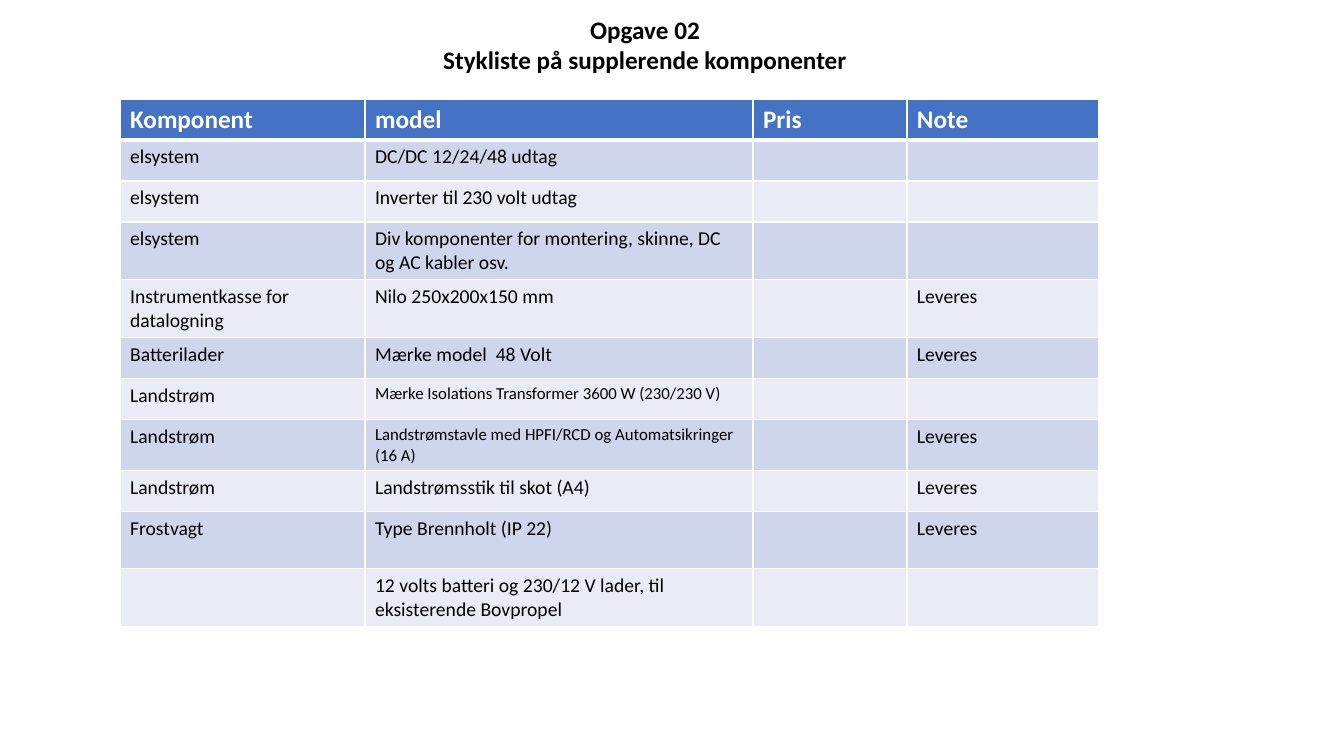
import dataclasses

import lxml.etree
import pptx
import pptx.dml.color
import pptx.enum.text
import pptx.oxml.ns
import pptx.util

EMU_PER_PX = 914400 / 100.8
FONT = "Calibri"
COLORS = {
    "header": "4472C4",
    "band_dark": "CFD5EA",
    "band_light": "E9EBF5",
    "white": "FFFFFF",
    "black": "000000",
}
TITLE_LINES = ("Opgave 02", "Stykliste på supplerende komponenter")
HEADINGS = ("Komponent", "model", "Pris", "Note")
COLUMN_WIDTHS = (245, 388, 154, 192)
ROW_HEIGHT = 41
THIN_BORDER, THICK_BORDER = 1, 3
TITLE_FORMAT = {"name": FONT, "size": pptx.util.Pt(18), "bold": True}


@dataclasses.dataclass(frozen=True)
class Component:
    name: str
    model: str
    note: str = ""
    height: int = ROW_HEIGHT
    model_size: int = 14


COMPONENTS = (
    Component("elsystem", "DC/DC 12/24/48 udtag"),
    Component("elsystem", "Inverter til 230 volt udtag"),
    Component("elsystem", "Div komponenter for montering, skinne, DC og AC kabler osv.", height=57),
    Component("Instrumentkasse for datalogning", "Nilo 250x200x150 mm", "Leveres", 57),
    Component("Batterilader", "Mærke model  48 Volt", "Leveres"),
    Component("Landstrøm", "Mærke Isolations Transformer 3600 W (230/230 V)", model_size=12),
    Component("Landstrøm", "Landstrømstavle med HPFI/RCD og Automatsikringer (16 A)", "Leveres", 50, 12),
    Component("Landstrøm", "Landstrømsstik til skot (A4)", "Leveres"),
    Component("Frostvagt", "Type Brennholt (IP 22)", "Leveres", 57),
    Component("", "12 volts batteri og 230/12 V lader, til eksisterende Bovpropel", height=57),
)


def px(length: int) -> pptx.util.Emu:
    return pptx.util.Emu(round(length * EMU_PER_PX))


def rgb(name: str) -> pptx.dml.color.RGBColor:
    return pptx.dml.color.RGBColor.from_string(COLORS[name])


def apply_format(target, values: dict) -> None:
    for attribute, value in values.items():
        setattr(target, attribute, value)


def set_borders(cell, top: int, bottom: int) -> None:
    """Draw white cell borders, with top and bottom widths in points."""
    properties = cell._tc.get_or_add_tcPr()
    widths = {"lnL": THIN_BORDER, "lnR": THIN_BORDER, "lnT": top, "lnB": bottom}
    for tag, width in widths.items():
        line = lxml.etree.SubElement(
            properties, pptx.oxml.ns.qn(f"a:{tag}"), w=str(pptx.util.Pt(width))
        )
        fill = lxml.etree.SubElement(line, pptx.oxml.ns.qn("a:solidFill"))
        lxml.etree.SubElement(fill, pptx.oxml.ns.qn("a:srgbClr"), val=COLORS["white"])


def fill_cell(cell, text: str, row: int, size: int) -> None:
    is_header = row == 0
    set_borders(
        cell,
        top=THICK_BORDER if row == 1 else THIN_BORDER,
        bottom=THICK_BORDER if is_header else THIN_BORDER,
    )
    cell.fill.solid()
    band = "band_dark" if row % 2 else "band_light"
    cell.fill.fore_color.rgb = rgb("header" if is_header else band)
    cell.text = text
    font = cell.text_frame.paragraphs[0].font
    for run in cell.text_frame.paragraphs[0].runs:
        font = run.font
    apply_format(font, {"name": FONT, "size": pptx.util.Pt(size), "bold": is_header})
    font.color.rgb = rgb("white" if is_header else "black")


def add_title(slide) -> None:
    title = slide.shapes.title
    apply_format(title, {"left": px(432), "top": px(9), "width": px(426), "height": px(72)})
    frame = title.text_frame
    frame.text = "\n".join(TITLE_LINES)
    apply_format(frame, {
        "word_wrap": False,
        "auto_size": pptx.enum.text.MSO_AUTO_SIZE.NONE,
        "vertical_anchor": pptx.enum.text.MSO_ANCHOR.TOP,
    })
    for paragraph in frame.paragraphs:
        paragraph.alignment = pptx.enum.text.PP_ALIGN.CENTER
        font = paragraph.runs[0].font
        apply_format(font, TITLE_FORMAT)
        font.color.rgb = rgb("black")


def add_parts_table(slide) -> None:
    heights = [ROW_HEIGHT] + [component.height for component in COMPONENTS]
    table = slide.shapes.add_table(
        len(heights), len(HEADINGS), px(120), px(99), px(sum(COLUMN_WIDTHS)), px(sum(heights))
    ).table
    apply_format(table, {"first_row": False, "horz_banding": False})
    for column, width in zip(table.columns, COLUMN_WIDTHS):
        column.width = px(width)
    for row, height in zip(table.rows, heights):
        row.height = px(height)
    for column, heading in enumerate(HEADINGS):
        fill_cell(table.cell(0, column), heading, 0, 18)
    for row, component in enumerate(COMPONENTS, start=1):
        texts = (component.name, component.model, "", component.note)
        sizes = (14, component.model_size, 14, 14)
        for column, (text, size) in enumerate(zip(texts, sizes)):
            fill_cell(table.cell(row, column), text, row, size)


def main() -> None:
    presentation = pptx.Presentation()
    apply_format(presentation, {"slide_width": px(1344), "slide_height": px(756)})
    slide = presentation.slides.add_slide(presentation.slide_layouts.get_by_name("Title Only"))
    add_title(slide)
    add_parts_table(slide)
    presentation.save("out.pptx")


if __name__ == "__main__":
    main()
